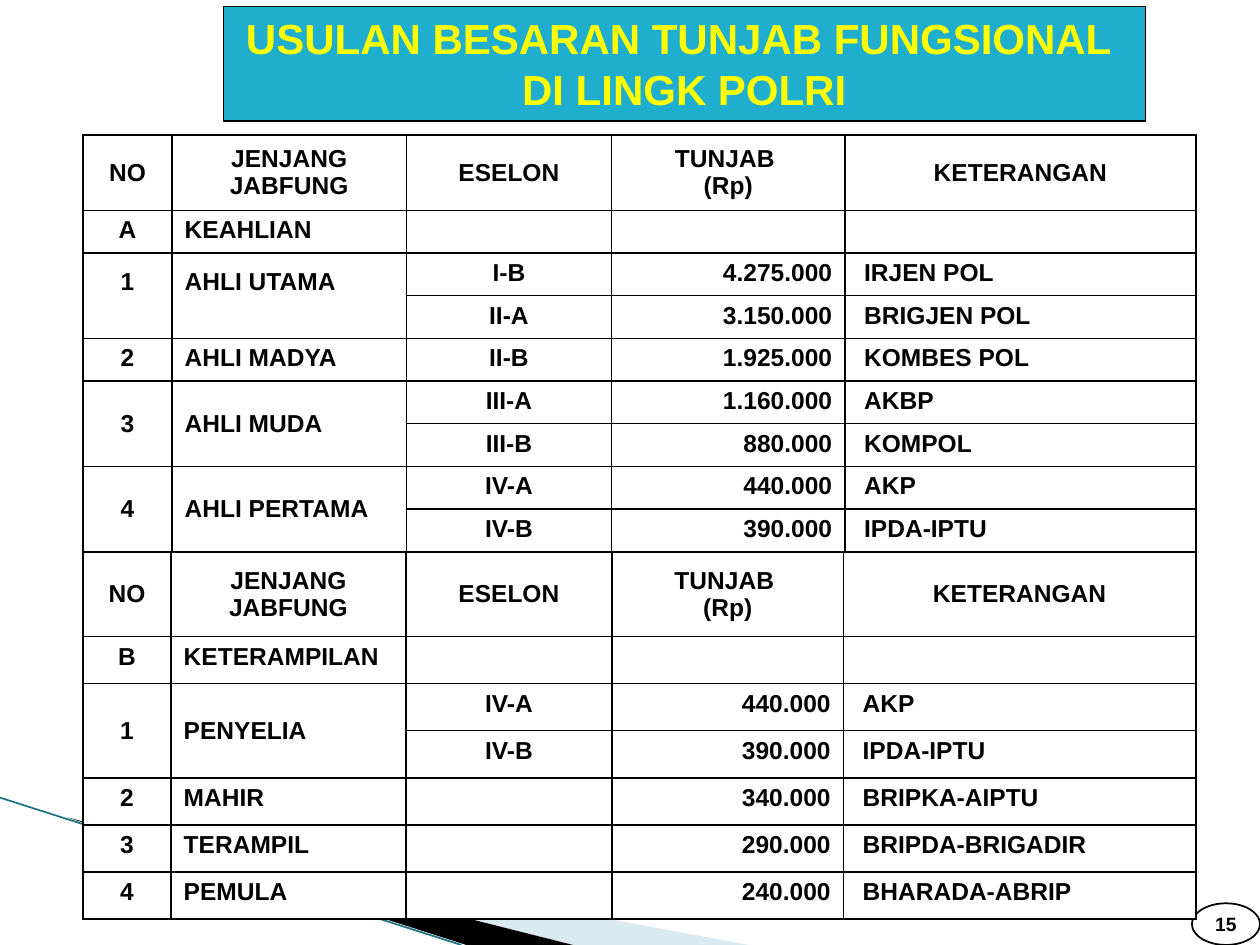
import lxml.etree
import pptx
import pptx.dml.color
import pptx.enum.shapes
import pptx.enum.text
import pptx.oxml
import pptx.oxml.ns
import pptx.util

Cm = pptx.util.Cm
Pt = pptx.util.Pt
ALIGN = pptx.enum.text.PP_ALIGN
ANCHOR = pptx.enum.text.MSO_ANCHOR
SHAPE = pptx.enum.shapes.MSO_SHAPE

THEME = {
    "font": "Arial",
    "title_size": 24, "table_size": 14, "number_size": 11,
    "ink": "000000", "paper": "FFFFFF", "banner": "1FAECD", "title": "FFFF00",
    "pale_wedge": "A0CBDC", "swoosh_line": "1C6F85",
}

TITLE = ["USULAN BESARAN TUNJAB FUNGSIONAL ", "DI LINGK POLRI"]
PAGE_NUMBER = "15"
HEADER = ("NO", "JENJANG JABFUNG", "ESELON", "TUNJAB \n(Rp)", "KETERANGAN")
COLUMN_ALIGNMENTS = (ALIGN.CENTER, ALIGN.LEFT, ALIGN.CENTER, ALIGN.RIGHT, ALIGN.JUSTIFY)

# None continues the cell above; an empty string is an empty cell.
EXPERT_TABLE = {
    "top": 2.72, "header_height": 1.52, "row_height": 0.86,
    "columns": (1.8, 4.72, 4.14, 4.7, 7.08),
    "rows": [
        ("A", "KEAHLIAN", "", "", ""),
        ("1", "AHLI UTAMA", "I-B", "4.275.000", "IRJEN POL"),
        (None, None, "II-A", "3.150.000", "BRIGJEN POL"),
        ("2", "AHLI MADYA", "II-B", "1.925.000", "KOMBES POL"),
        ("3", "AHLI MUDA", "III-A", "1.160.000", "AKBP"),
        (None, None, "III-B", "880.000", "KOMPOL"),
        ("4", "AHLI PERTAMA", "IV-A", "440.000", "AKP"),
        (None, None, "IV-B", "390.000", "IPDA-IPTU"),
    ],
    "raised_row": 2,
}
SKILL_TABLE = {
    "top": 11.13, "header_height": 1.7, "row_height": 0.95,
    "columns": (1.78, 4.73, 4.16, 4.66, 7.11),
    "rows": [
        ("B", "KETERAMPILAN", "", "", ""),
        ("1", "PENYELIA", "IV-A", "440.000", "AKP"),
        (None, None, "IV-B", "390.000", "IPDA-IPTU"),
        ("2", "MAHIR", "", "340.000", "BRIPKA-AIPTU"),
        ("3", "TERAMPIL", "", "290.000", "BRIPDA-BRIGADIR"),
        ("4", "PEMULA", "", "240.000", "BHARADA-ABRIP"),
    ],
    "raised_row": None,
}
TABLE_LEFT = 1.67

PALE_WEDGE = [(1.4, 16.52), (15.1, 19.05), (11.55, 19.05)]
DARK_WEDGE = [(1.36, 16.48), (11.55, 19.05), (9.4, 19.05)]


def color(name):
    return pptx.dml.color.RGBColor.from_string(THEME[name])


def xml(markup):
    return pptx.oxml.parse_xml(markup.replace(">", f" {pptx.oxml.ns.nsdecls('a')}>", 1))


def format_text(text_frame, size, color_name, alignment):
    for paragraph in text_frame.paragraphs:
        paragraph.alignment = alignment
        for run in paragraph.runs:
            run.font.name = THEME["font"]
            run.font.size = Pt(size)
            run.font.bold = True
            run.font.color.rgb = color(color_name)
        if not paragraph.runs:
            paragraph._p.get_or_add_endParaRPr().set("sz", str(size * 100))


def add_wedge(slide, points, color_name, opacity=100):
    builder = slide.shapes.build_freeform(Cm(points[0][0]), Cm(points[0][1]), scale=1.0)
    builder.add_line_segments([(Cm(x), Cm(y)) for x, y in points[1:]], close=True)
    shape = builder.convert_to_shape()
    shape.shadow.inherit = False
    shape.fill.solid()
    shape.fill.fore_color.rgb = color(color_name)
    shape.line.fill.background()
    if opacity < 100:
        fill_color = shape._element.spPr.find(".//" + pptx.oxml.ns.qn("a:srgbClr"))
        fill_color.append(xml(f'<a:alpha val="{opacity * 1000}"></a:alpha>'))


def add_label(slide, kind, box, fill, line_width):
    shape = slide.shapes.add_shape(kind, *map(Cm, box))
    shape.shadow.inherit = False
    shape.fill.solid()
    shape.fill.fore_color.rgb = color(fill)
    shape.line.color.rgb = color("ink")
    shape.line.width = Pt(line_width)
    return shape


def add_swoosh_line(slide):
    line = slide.shapes.add_connector(pptx.enum.shapes.MSO_CONNECTOR.STRAIGHT,
                                      Cm(0), Cm(16.08), Cm(9.3), Cm(19.05))
    line.line.color.rgb = color("swoosh_line")
    line.line.width = Pt(0.95)
    line._element.spPr.append(xml("<a:effectLst></a:effectLst>"))


def add_title(slide):
    banner = add_label(slide, SHAPE.RECTANGLE, (4.5, 0.13, 18.59, 2.31), "banner", 0.75)
    frame = banner.text_frame
    frame.word_wrap = True
    frame.vertical_anchor = ANCHOR.TOP
    frame.text = "\n".join(TITLE)
    format_text(frame, THEME["title_size"], "title", ALIGN.CENTER)
    for paragraph in frame.paragraphs:
        for run in paragraph.runs:
            properties = run._r.get_or_add_rPr()
            properties.insert(0, xml(
                f'<a:ln w="9525"><a:solidFill><a:srgbClr val="{THEME["title"]}"/>'
                '</a:solidFill></a:ln>'))
            properties.find(pptx.oxml.ns.qn("a:solidFill")).addnext(xml(
                '<a:effectLst><a:outerShdw blurRad="38100" dist="38100" dir="2700000">'
                f'<a:srgbClr val="{THEME["ink"]}"/></a:outerShdw></a:effectLst>'))


def add_page_number(slide):
    badge = add_label(slide, SHAPE.OVAL, (24.03, 18.21, 1.37, 0.84), "paper", 1)
    frame = badge.text_frame
    frame.margin_left = frame.margin_right = frame.margin_top = frame.margin_bottom = 0
    frame.vertical_anchor = ANCHOR.MIDDLE
    frame.text = PAGE_NUMBER
    format_text(frame, THEME["number_size"], "ink", ALIGN.CENTER)


def style_cell(cell):
    properties = cell._tc.get_or_add_tcPr()
    for side in "LRTB":
        properties.append(xml(
            f'<a:ln{side} w="12700"><a:solidFill><a:srgbClr val="{THEME["ink"]}"/>'
            f'</a:solidFill></a:ln{side}>'))
    cell.fill.solid()
    cell.fill.fore_color.rgb = color("paper")


def add_allowance_table(slide, content):
    rows = [HEADER] + content["rows"]
    heights = [content["header_height"]] + [content["row_height"]] * len(content["rows"])
    widths = content["columns"]
    table = slide.shapes.add_table(
        len(rows), len(widths), Cm(TABLE_LEFT), Cm(content["top"]),
        Cm(sum(widths)), Cm(sum(heights))).table
    table.horz_banding = False
    for column, width in zip(table.columns, widths):
        column.width = Cm(width)
    for row, height in zip(table.rows, heights):
        row.height = Cm(height)

    for row_index, row in enumerate(rows):
        for column_index, text in enumerate(row):
            cell = table.cell(row_index, column_index)
            style_cell(cell)
            cell.text = text or ""
            is_header = row_index == 0
            alignment = ALIGN.CENTER if is_header else COLUMN_ALIGNMENTS[column_index]
            format_text(cell.text_frame, THEME["table_size"], "ink", alignment)
            if is_header:
                cell.vertical_anchor = ANCHOR.MIDDLE
            elif column_index == len(row) - 1:
                cell.margin_left = Cm(0.39)
            if text is None:
                label = table.cell(row_index - 1, column_index)
                label.merge(cell)
                label.vertical_anchor = ANCHOR.MIDDLE
                if row_index - 1 == content["raised_row"]:
                    label.margin_bottom = Cm(0.66)


def main():
    presentation = pptx.Presentation()
    presentation.slide_width = Cm(25.4)
    presentation.slide_height = Cm(19.05)
    slide = presentation.slides.add_slide(presentation.slide_layouts[6])
    add_wedge(slide, PALE_WEDGE, "pale_wedge", opacity=40)
    add_wedge(slide, DARK_WEDGE, "ink")
    add_swoosh_line(slide)
    add_allowance_table(slide, EXPERT_TABLE)
    add_title(slide)
    add_page_number(slide)
    add_allowance_table(slide, SKILL_TABLE)
    presentation.save("out.pptx")


if __name__ == "__main__":
    main()
